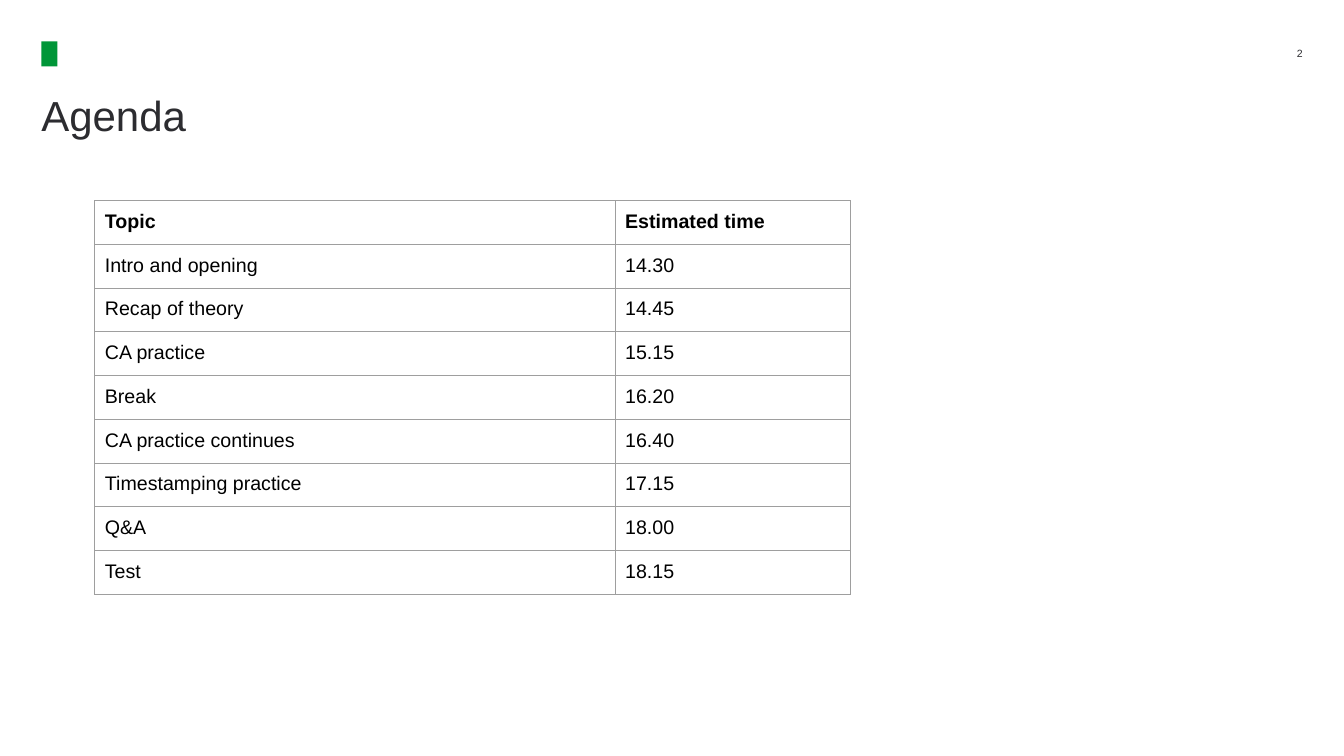
from dataclasses import dataclass

from lxml.etree import SubElement
from pptx import Presentation
from pptx.dml.color import RGBColor as RGB
from pptx.enum.shapes import MSO_SHAPE as SHAPE
from pptx.enum.text import MSO_ANCHOR as ANCHOR, PP_ALIGN as ALIGN
from pptx.oxml.ns import qn
from pptx.util import Inches, Pt


@dataclass(frozen=True)
class Theme:
    """Colours, font and type sizes of the slide."""
    font: str = "Arial"
    ink: str = "2C2C30"
    body: str = "000000"
    mark: str = "009638"
    border: str = "9E9E9E"
    title_size: float = 30
    table_size: float = 14
    number_size: float = 7.5
    border_width: float = 0.75


THEME = Theme()
WIDTH, HEIGHT = 13.33, 7.5
MARGIN = 0.41
ROW_HEIGHT = 0.42
COLUMNS = (5.16, 2.34)
CELL_INSET = 0.1
AGENDA = (
    ("Topic", "Estimated time"),
    ("Intro and opening", "14.30"),
    ("Recap of theory", "14.45"),
    ("CA practice", "15.15"),
    ("Break", "16.20"),
    ("CA practice continues", "16.40"),
    ("Timestamping practice", "17.15"),
    ("Q&A", "18.00"),
    ("Test", "18.15"),
)


def write(tf, text, size, color=THEME.ink, bold=False, align=ALIGN.LEFT, inset=0):
    """Put one formatted paragraph into a text frame."""
    tf.word_wrap = True
    tf.margin_left = tf.margin_right = Inches(inset)
    tf.margin_top = tf.margin_bottom = Inches(inset)
    p = tf.paragraphs[0]
    p.alignment = align
    r = p.add_run()
    r.text = text
    r.font.name, r.font.size, r.font.bold = THEME.font, Pt(size), bold
    r.font.color.rgb = RGB.from_string(color)


def add_label(s, box, text, size, anchor=ANCHOR.TOP, **fmt):
    """Add a text box at left, top, width, height."""
    tf = s.shapes.add_textbox(*map(Inches, box)).text_frame
    tf.vertical_anchor = anchor
    write(tf, text, size, **fmt)


def add_mark(s, box):
    """Add the plain block in the top left corner."""
    sp = s.shapes.add_shape(SHAPE.RECTANGLE, *map(Inches, box))
    sp.shadow.inherit = False
    sp.fill.solid()
    sp.fill.fore_color.rgb = RGB.from_string(THEME.mark)
    sp.line.fill.background()


def add_borders(cell):
    """Draw the same thin line on all four sides of a cell."""
    tc_pr = cell._tc.get_or_add_tcPr()
    for i, side in enumerate(("a:lnL", "a:lnR", "a:lnT", "a:lnB")):
        ln = SubElement(tc_pr, qn(side), w=str(Pt(THEME.border_width)))
        fill = SubElement(ln, qn("a:solidFill"))
        SubElement(fill, qn("a:srgbClr"), val=THEME.border)
        tc_pr.insert(i, ln)


def add_agenda(s, left, top):
    """Add the agenda table with a bold heading row."""
    size = sum(COLUMNS), ROW_HEIGHT * len(AGENDA)
    frame = s.shapes.add_table(
        len(AGENDA), len(COLUMNS), *map(Inches, (left, top, *size)))
    table = frame.table
    table.horz_banding = table.first_row = False
    for column, width in zip(table.columns, COLUMNS):
        column.width = Inches(width)
    for i, entry in enumerate(AGENDA):
        table.rows[i].height = Inches(ROW_HEIGHT)
        for j, text in enumerate(entry):
            cell = table.cell(i, j)
            cell.fill.background()
            cell.margin_left = cell.margin_right = Inches(CELL_INSET)
            cell.margin_top = cell.margin_bottom = Inches(CELL_INSET)
            write(cell.text_frame, text, THEME.table_size, color=THEME.body,
                  bold=i == 0, inset=CELL_INSET)
            add_borders(cell)


def main():
    """Build the agenda slide and save it."""
    prs = Presentation()
    prs.slide_width, prs.slide_height = Inches(WIDTH), Inches(HEIGHT)
    s = prs.slides.add_slide(prs.slide_layouts[6])
    inner = WIDTH - 2 * MARGIN
    number_width = 0.39
    add_mark(s, (MARGIN, MARGIN, 0.16, 0.25))
    add_label(s, (MARGIN, 0.89, inner, 0.18 * HEIGHT), "Agenda", THEME.title_size)
    add_label(s, (WIDTH - MARGIN - number_width, MARGIN, number_width, 0.24), "2",
              THEME.number_size, anchor=ANCHOR.MIDDLE, align=ALIGN.RIGHT)
    add_agenda(s, 0.94, 1.99)
    prs.save("out.pptx")


if __name__ == "__main__":
    main()
